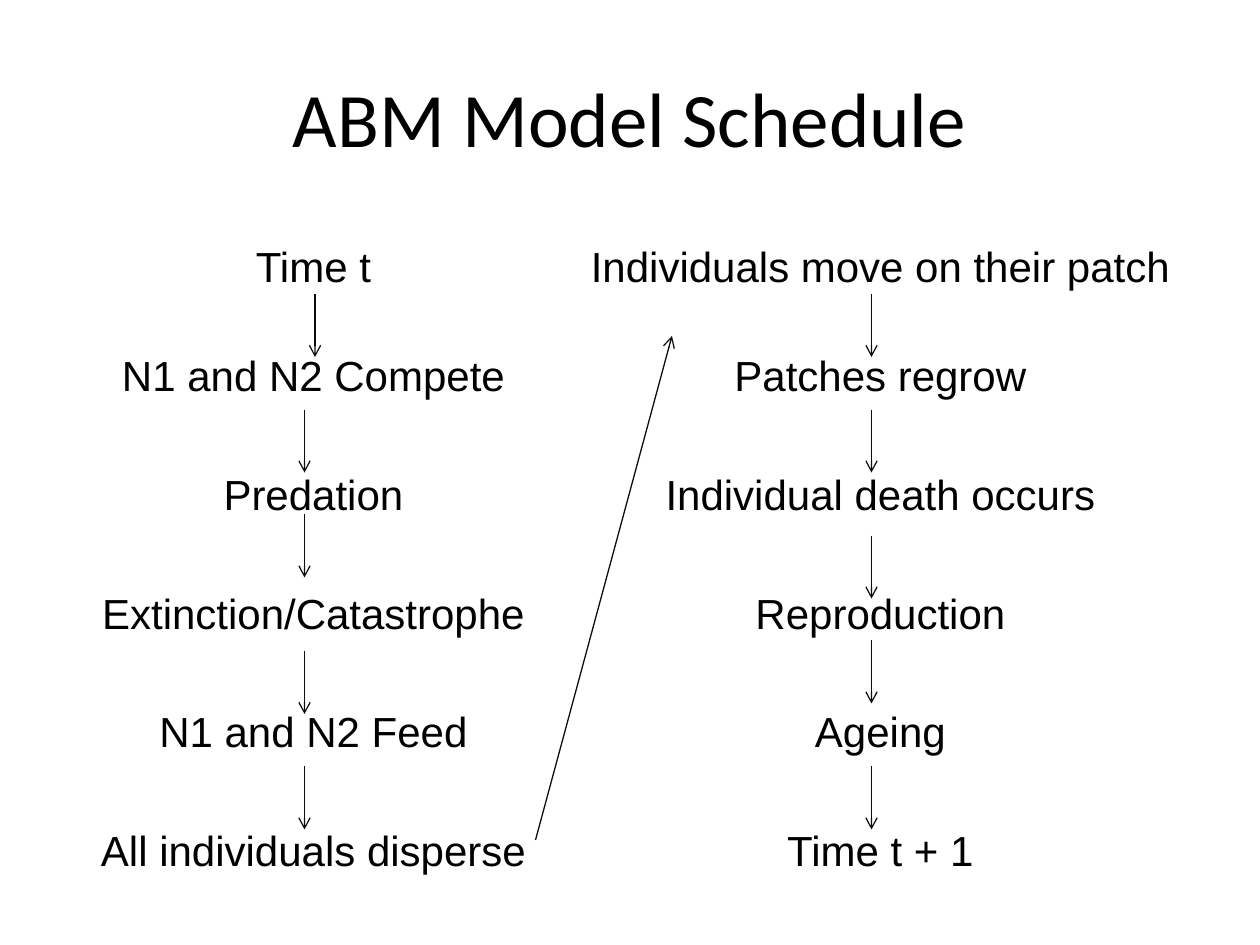
from dataclasses import dataclass

from lxml import etree
from pptx import Presentation
from pptx.dml.color import RGBColor
from pptx.enum import shapes, text
from pptx.oxml import ns
from pptx.util import Inches, Pt

COLS, ROWS = 120, 90
WIDTH, HEIGHT = Inches(10), Inches(7.5)
BLACK, INK, WHITE = "000000", "0D0D0D", "FFFFFF"
ARROW_ROWS = 6


@dataclass(frozen=True)
class Step:
    left: str
    right: str
    rows: float = 11.3


@dataclass(frozen=True)
class Arrow:
    x1: float
    y1: float
    x2: float
    y2: float


STEPS = [
    Step("Time t", "Individuals move on their patch", 10.4),
    Step("N1 and N2 Compete", "Patches regrow"),
    Step("Predation", "Individual death occurs"),
    Step("Extinction/Catastrophe", "Reproduction"),
    Step("N1 and N2 Feed", "Ageing"),
    Step("All individuals disperse", "Time t + 1"),
]
DOWN_STARTS = {30: [28], 29: [39, 49, 62, 73], 83: [28, 39, 51, 61, 73]}
ARROWS = [Arrow(x, y, x, y + ARROW_ROWS) for x, ys in DOWN_STARTS.items() for y in ys]
ARROWS.append(Arrow(51, 80, 64, 32))


def col(n: float) -> int:
    return round(WIDTH * n / COLS)


def row(n: float) -> int:
    return round(HEIGHT * n / ROWS)


def color(value: str) -> RGBColor:
    return RGBColor.from_string(value)


def write(tf, content: str, font: str, size: float) -> None:
    p = tf.paragraphs[0]
    p.alignment = text.PP_ALIGN.CENTER
    r = p.add_run()
    r.text = content
    for name, value in {"name": font, "size": Pt(size), "bold": False}.items():
        setattr(r.font, name, value)
    r.font.color.rgb = color(BLACK)


def add_borders(cell, bottom: float) -> None:
    tc_pr = cell._tc.get_or_add_tcPr()
    widths = {"lnL": 1, "lnR": 1, "lnT": 1, "lnB": bottom}
    for i, (side, width) in enumerate(widths.items()):
        ln = etree.Element(ns.qn(f"a:{side}"), w=str(Pt(width)))
        fill = etree.SubElement(ln, ns.qn("a:solidFill"))
        etree.SubElement(fill, ns.qn("a:srgbClr"), val=WHITE)
        tc_pr.insert(i, ln)


def add_title(s, content: str) -> None:
    sp = s.shapes.add_textbox(col(6), row(3.6), col(108), row(15))
    tf = sp.text_frame
    for name, value in {"word_wrap": True, "vertical_anchor": text.MSO_ANCHOR.MIDDLE}.items():
        setattr(tf, name, value)
    write(tf, content, "Calibri", 44)


def add_schedule(s, steps: list[Step]) -> None:
    total = sum(step.rows for step in steps)
    table = s.shapes.add_table(len(steps), 2, col(5), row(22.7), col(108), row(total)).table
    for name in ("first_row", "horz_banding"):
        setattr(table, name, False)
    for column, width in zip(table.columns, (49.7, 58.3)):
        column.width = col(width)
    for i, step in enumerate(steps):
        table.rows[i].height = row(step.rows)
        for j, content in enumerate((step.left, step.right)):
            cell = table.cell(i, j)
            cell.fill.solid()
            cell.fill.fore_color.rgb = color(WHITE)
            add_borders(cell, 3 if i == 0 else 1)
            write(cell.text_frame, content, "Arial", 24)


def add_arrow(s, a: Arrow) -> None:
    sp = s.shapes.add_connector(
        shapes.MSO_CONNECTOR.STRAIGHT, col(a.x1), row(a.y1), col(a.x2), row(a.y2)
    )
    sp.line.width = Pt(0.75)
    sp.line.color.rgb = color(INK)
    etree.SubElement(sp.line._get_or_add_ln(), ns.qn("a:tailEnd"), type="arrow")
    etree.SubElement(sp._element.spPr, ns.qn("a:effectLst"))


def main() -> None:
    prs = Presentation()
    for name, value in {"slide_width": WIDTH, "slide_height": HEIGHT}.items():
        setattr(prs, name, value)
    s = prs.slides.add_slide(prs.slide_layouts[6])
    add_title(s, "ABM Model Schedule")
    add_schedule(s, STEPS)
    for arrow in ARROWS:
        add_arrow(s, arrow)
    prs.save("out.pptx")


if __name__ == "__main__":
    main()
